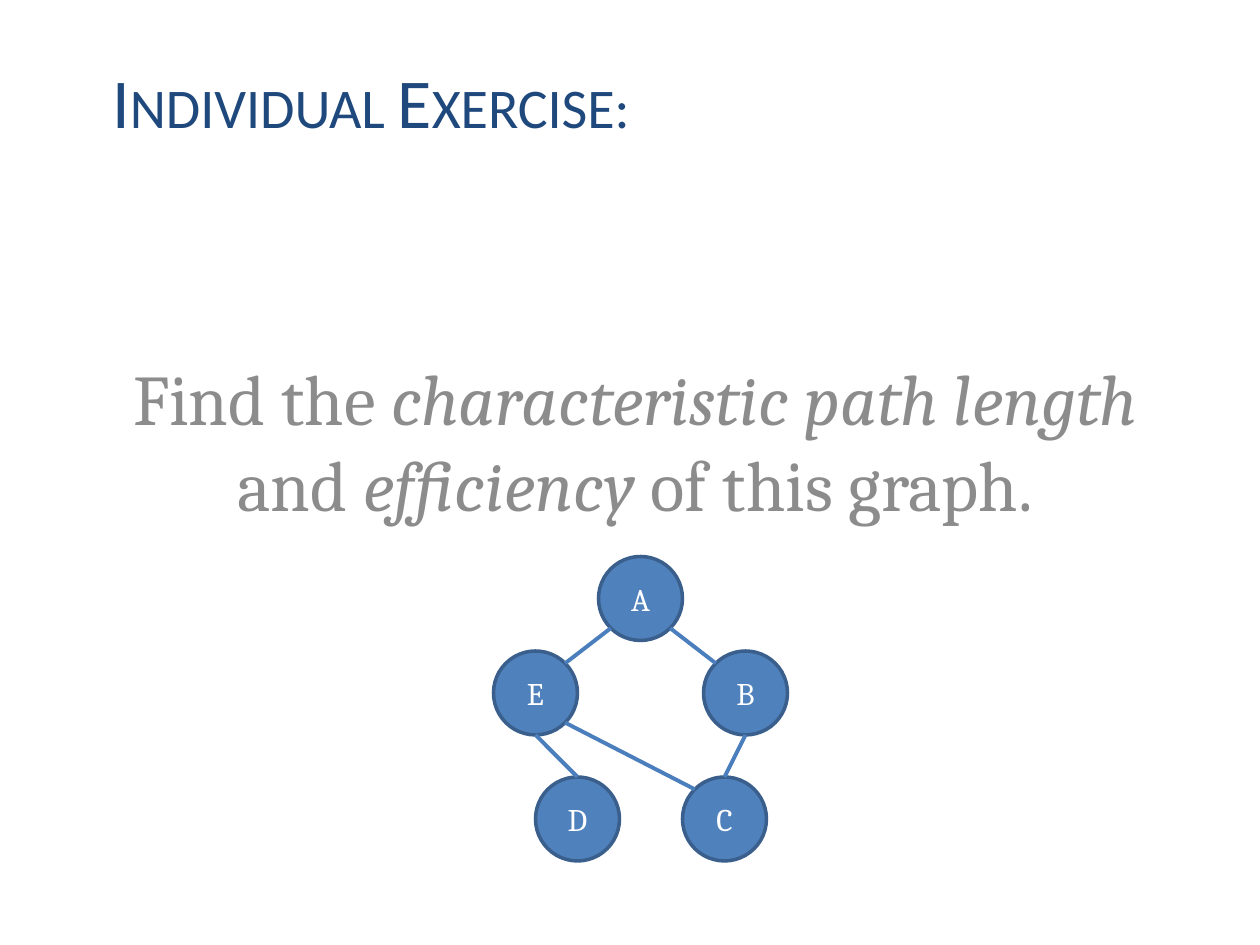
from math import cos, radians, sin

from lxml import etree
from pptx import Presentation
from pptx.dml.color import RGBColor
from pptx.enum import shapes, text
from pptx.oxml.ns import qn
from pptx.util import Pt

SIZE = 48
NODES = {"A": (342, 318), "B": (402, 372), "C": (390, 444),
         "D": (306, 444), "E": (282, 372)}
EDGES = [("E", -45, "A", 135), ("B", -135, "A", 45), ("B", 90, "C", -90),
         ("E", 45, "C", -135), ("D", -90, "E", 90)]


def color(code):
    return RGBColor.from_string(code)


def style(font, name, size, code):
    font.name = name
    font.size = Pt(size)
    font.color.rgb = color(code)


def place(holder, left, top, width, height, anchor):
    holder.left, holder.top = Pt(left), Pt(top)
    holder.width, holder.height = Pt(width), Pt(height)
    frame = holder.text_frame
    frame.auto_size = text.MSO_AUTO_SIZE.NONE
    frame.vertical_anchor = anchor
    return frame.paragraphs[0]


def add_title(slide):
    para = place(slide.shapes.title, 57, 30, 612, 107, text.MSO_ANCHOR.TOP)
    run = para.add_run()
    run.text = "Individual Exercise:"
    run.font._element.set("cap", "small")
    para.alignment = text.PP_ALIGN.LEFT
    para.font.bold = False
    style(para.font, "Calibri", 40, "1F497D")


def add_task(slide):
    para = place(slide.placeholders[1], 57, 186, 612, 118, text.MSO_ANCHOR.BOTTOM)
    para.alignment = text.PP_ALIGN.CENTER
    para.space_before = Pt(0)
    style(para.font, "Cambria", 40.7, "8C8C8C")
    parts = ["Find the ", "characteristic path length", " and ",
             "efficiency", " of this graph."]
    for index, part in enumerate(parts):
        run = para.add_run()
        run.text = part
        run.font.italic = index % 2 == 1


def add_node(slide, name):
    left, top = NODES[name]
    node = slide.shapes.add_shape(shapes.MSO_SHAPE.OVAL, Pt(left), Pt(top),
                                  Pt(SIZE), Pt(SIZE))
    node.shadow.inherit = False
    node.fill.solid()
    node.fill.fore_color.rgb = color("4F81BD")
    node.line.color.rgb = color("3A5F8C")
    node.line.width = Pt(2)
    frame = node.text_frame
    frame.vertical_anchor = text.MSO_ANCHOR.MIDDLE
    para = frame.paragraphs[0]
    para.text = name
    para.alignment = text.PP_ALIGN.CENTER
    style(para.font, "Cambria", 18, "FFFFFF")


def rim(name, angle):
    left, top = NODES[name]
    half = SIZE / 2
    turn = radians(angle)
    return Pt(left + half + half * cos(turn)), Pt(top + half + half * sin(turn))


def add_edge(slide, start, out, end, into):
    edge = slide.shapes.add_connector(shapes.MSO_CONNECTOR.STRAIGHT,
                                      *rim(start, out), *rim(end, into))
    edge.line.color.rgb = color("4B7EBC")
    edge.line.width = Pt(2.25)
    etree.SubElement(edge._element.spPr, qn("a:effectLst"))


def main():
    deck = Presentation()
    deck.slide_width, deck.slide_height = Pt(720), Pt(540)
    slide = deck.slides.add_slide(deck.slide_layouts[2])
    add_title(slide)
    add_task(slide)
    for name in NODES:
        add_node(slide, name)
    for edge in EDGES:
        add_edge(slide, *edge)
    deck.save("out.pptx")


if __name__ == "__main__":
    main()
